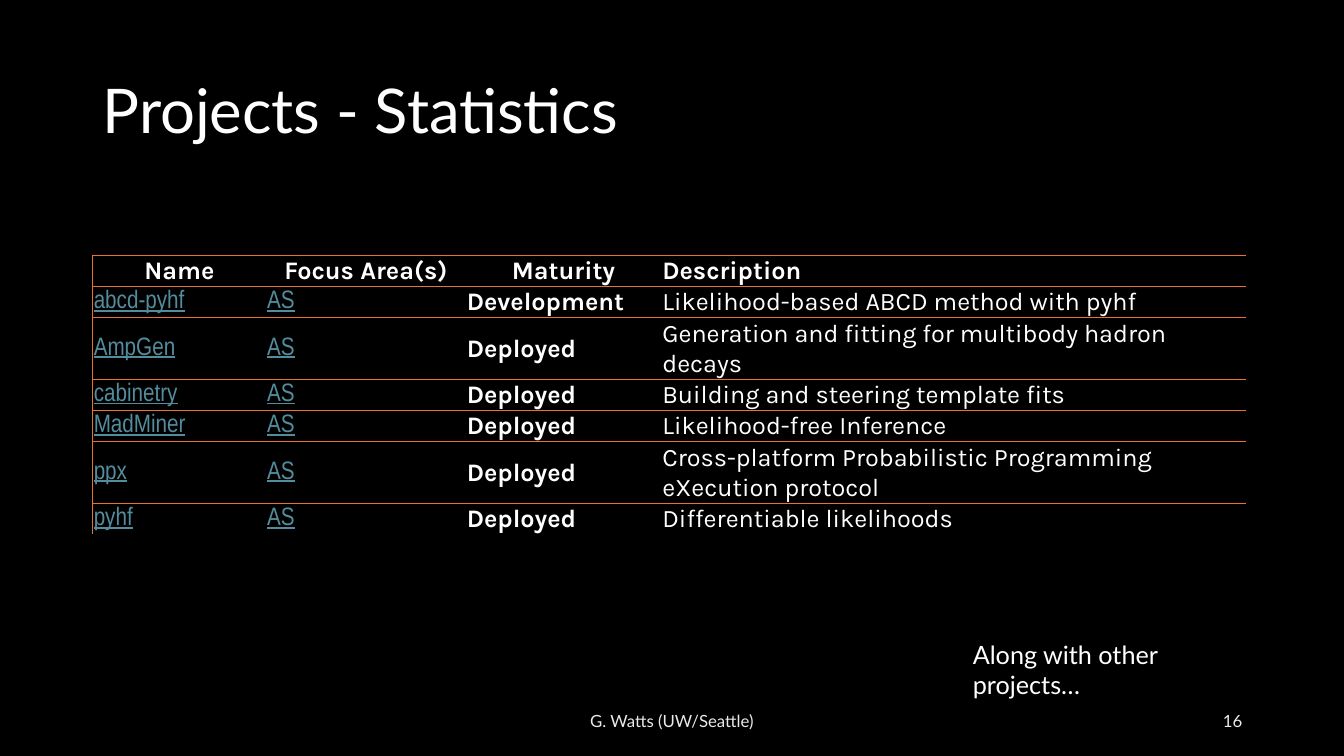
"""Build the statistics projects slide."""
from lxml import etree
from pptx import Presentation
from pptx.dml.color import RGBColor
from pptx.enum.text import MSO_ANCHOR, PP_ALIGN
from pptx.oxml.ns import qn
from pptx.util import Inches, Pt

LEFT, MID, RIGHT = PP_ALIGN.LEFT, PP_ALIGN.CENTER, PP_ALIGN.RIGHT
CENTER, TOP = MSO_ANCHOR.MIDDLE, MSO_ANCHOR.TOP
BLACK, WHITE, PALE = "000000", "FFFFFF", "EAEAEA"
TEAL, ORANGE = "538D9D", "E97132"

WIDE, HIGH = 13.33, 7.5
EDGE, BODY = 0.92, 11.5
COLS = [1.72, 1.98, 1.94, 5.8]
ROW = 0.28
FOOT = 6.95

TEXTS = [
    ("Projects - Statistics", (EDGE, 0.4, BODY, 1.45), 44, WHITE, LEFT, CENTER),
    ("G. Watts (UW/Seattle)", ((WIDE - 4.5) / 2, FOOT, 4.5, 0.4), 12, PALE, MID, CENTER),
    ("16", (EDGE + BODY - 3, FOOT, 3, 0.4), 12, PALE, RIGHT, CENTER),
    ("Along with other projects…", (9.55, 6.29, 3.05, 0.7), 18, WHITE, LEFT, TOP),
]
HEAD = ["Name", "Focus Area(s)", "Maturity", "Description"]
TOOLS = [
    ("abcd-pyhf", "Development", "Likelihood-based ABCD method with pyhf"),
    ("AmpGen", "Deployed", "Generation and fitting for multibody hadron decays"),
    ("cabinetry", "Deployed", "Building and steering template fits"),
    ("MadMiner", "Deployed", "Likelihood-free Inference"),
    ("ppx", "Deployed", "Cross-platform Probabilistic Programming eXecution protocol"),
    ("pyhf", "Deployed", "Differentiable likelihoods"),
]
ROWS = [HEAD] + [(name, "AS", stage, about) for name, stage, about in TOOLS]


def color(code):
    return RGBColor.from_string(code)


def style(para, face, size, code, align):
    para.alignment = align
    para.font.name = face
    para.font.size = Pt(size)
    para.font.color.rgb = color(code)


def add_text(slide, text, area, size, code, align, anchor):
    frame = slide.shapes.add_textbox(*map(Inches, area)).text_frame
    frame.word_wrap = True
    frame.vertical_anchor = anchor
    para = frame.paragraphs[0]
    para.text = text
    style(para, "Lato", size, code, align)
    if size == 44:
        para.line_spacing = 0.9


def add_rules(cell, sides):
    props = cell._tc.get_or_add_tcPr()
    for spot, side in enumerate(("L", "R", "T", "B")):
        shown = side in sides
        line = etree.Element(qn(f"a:ln{side}"), w=str(Pt(0.5) if shown else 0))
        fill = etree.SubElement(line, qn("a:solidFill" if shown else "a:noFill"))
        if shown:
            etree.SubElement(fill, qn("a:srgbClr"), val=ORANGE)
        props.insert(spot, line)


def fill_cell(cell, text, row, col):
    cell.fill.solid()
    cell.fill.fore_color.rgb = color(BLACK)
    cell.vertical_anchor = CENTER
    cell.margin_left = cell.margin_right = cell.margin_top = Inches(0.01)
    cell.margin_bottom = 0
    para = cell.text_frame.paragraphs[0]
    para.text = text
    link = row > 0 and col < 2
    face, code = ("Arial Narrow", TEAL) if link else ("Karla", WHITE)
    style(para, face, 18, code, MID if row == 0 and col < 3 else LEFT)
    para.font.bold = row == 0 or col == 2
    para.font.underline = link
    last = row == len(ROWS) - 1
    add_rules(cell, ("L" if col == 0 else "") + ("T" if last else "TB"))


def add_grid(slide):
    area = (EDGE, 2.53, sum(COLS), ROW * len(ROWS))
    table = slide.shapes.add_table(len(ROWS), len(COLS), *map(Inches, area)).table
    for col, width in enumerate(COLS):
        table.columns[col].width = Inches(width)
    for row, texts in enumerate(ROWS):
        table.rows[row].height = Inches(ROW)
        for col, text in enumerate(texts):
            fill_cell(table.cell(row, col), text, row, col)


def main():
    deck = Presentation()
    deck.slide_width, deck.slide_height = Inches(WIDE), Inches(HIGH)
    slide = deck.slides.add_slide(deck.slide_layouts[6])
    slide.background.fill.solid()
    slide.background.fill.fore_color.rgb = color(BLACK)
    for item in TEXTS:
        add_text(slide, *item)
    add_grid(slide)
    deck.save("out.pptx")


if __name__ == "__main__":
    main()
